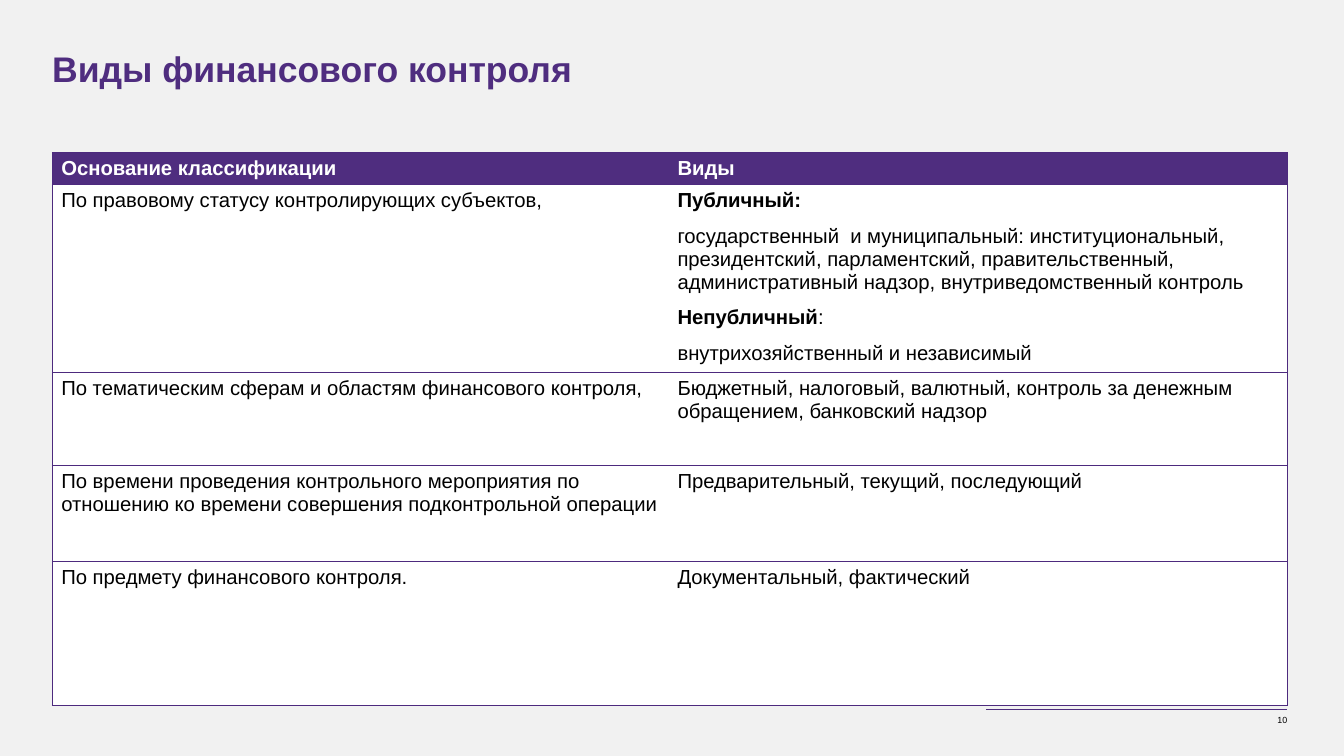
from dataclasses import dataclass

from lxml import etree
from pptx import Presentation, util as u
from pptx.dml.color import RGBColor
from pptx.enum import shapes, text
from pptx.oxml.ns import qn

COLORS = {
    "background": "F1F1F1", "purple": "4F2D7F", "border": "4D2A7E",
    "white": "FFFFFF", "black": "000000",
}
WIDTH, HEIGHT = u.Inches(14.7), u.Inches(8.27)
LEFT, SPAN, TABLE_TOP = 3.88, 91.9, 20.19
COLUMNS = (45.85, 46.05)
RULE_LEFT, RULE_TOP = 73.4, 93.83


@dataclass(frozen=True)
class Run:
    text: str
    bold: bool = False


@dataclass(frozen=True)
class Style:
    size: float
    color: str
    line: float | None = None
    before: float = 0
    align: text.PP_ALIGN = text.PP_ALIGN.LEFT


@dataclass(frozen=True)
class Row:
    height: float
    basis: list[list[Run]]
    kinds: list[list[Run]]
    fill: str = "white"
    color: str = "black"


TITLE = Style(28, "purple", line=34)
NUMBER = Style(7, "black", align=text.PP_ALIGN.RIGHT)
ROWS = [
    Row(4.2, [[Run("Основание классификации", True)]], [[Run("Виды", True)]],
        "purple", "white"),
    Row(24.8, [[Run("По правовому статусу контролирующих субъектов,")]], [
        [Run("Публичный:", True)],
        [Run("государственный  и муниципальный: институциональный, "
             "президентский, парламентский, правительственный, "
             "административный надзор, внутриведомственный контроль")],
        [Run("Непубличный", True), Run(":")],
        [Run("внутрихозяйственный и независимый")],
    ]),
    Row(12.35, [[Run("По тематическим сферам и областям финансового контроля,")]],
        [[Run("Бюджетный, налоговый, валютный, контроль за денежным "
              "обращением, банковский надзор")]]),
    Row(12.7, [[Run("По времени проведения контрольного мероприятия по "
                    "отношению ко времени совершения подконтрольной операции")]],
        [[Run("Предварительный, текущий, последующий")]]),
    Row(19, [[Run("По предмету финансового контроля.")]],
        [[Run("Документальный, фактический")]]),
]


def x(percent: float) -> int:
    return round(WIDTH * percent / 100)


def y(percent: float) -> int:
    return round(HEIGHT * percent / 100)


def rgb(name: str) -> RGBColor:
    return RGBColor.from_string(COLORS[name])


def assign(target, values: dict) -> None:
    for name, value in values.items():
        setattr(target, name, value)


def write(tf, paragraphs: list[list[Run]], style: Style) -> None:
    for i, runs in enumerate(paragraphs):
        p = tf.add_paragraph() if i else tf.paragraphs[0]
        assign(p, {"alignment": style.align, "space_before": u.Pt(style.before)})
        if style.line:
            p.line_spacing = u.Pt(style.line)
        for run in runs:
            r = p.add_run()
            r.text = run.text
            assign(r.font, {"name": "Arial", "size": u.Pt(style.size), "bold": run.bold})
            r.font.color.rgb = rgb(style.color)


def add_text(slide, box: tuple[int, int, int, int], run: Run, style: Style,
             wrap: bool, inset: float) -> None:
    tf = slide.shapes.add_textbox(*box).text_frame
    assign(tf, {"margin_left": 0, "margin_right": 0, "margin_top": u.Inches(inset),
                "margin_bottom": u.Inches(inset), "word_wrap": wrap})
    write(tf, [[run]], style)


def add_borders(cell, column: int) -> None:
    inner = "lnR" if column == 0 else "lnL"
    tc_pr = cell._tc.get_or_add_tcPr()
    for side in ("lnL", "lnR", "lnT", "lnB"):
        ln = etree.SubElement(tc_pr, qn(f"a:{side}"), w=str(u.Pt(0.75)))
        if side == inner:
            etree.SubElement(ln, qn("a:noFill"))
        else:
            fill = etree.SubElement(ln, qn("a:solidFill"))
            etree.SubElement(fill, qn("a:srgbClr"), val=COLORS["border"])


def add_kinds_table(slide) -> None:
    table = slide.shapes.add_table(
        len(ROWS), len(COLUMNS), x(LEFT), y(TABLE_TOP), x(SPAN),
        y(sum(row.height for row in ROWS))).table
    table.horz_banding = False
    for column, width in zip(table.columns, COLUMNS):
        column.width = x(width)
    for i, row in enumerate(ROWS):
        table.rows[i].height = y(row.height)
        style = Style(16, row.color, line=18, before=10)
        for j, paragraphs in enumerate((row.basis, row.kinds)):
            cell = table.cell(i, j)
            add_borders(cell, j)
            cell.fill.solid()
            cell.fill.fore_color.rgb = rgb(row.fill)
            write(cell.text_frame, paragraphs, style)


def add_rule(slide) -> None:
    line = slide.shapes.add_connector(
        shapes.MSO_CONNECTOR.STRAIGHT, x(RULE_LEFT), y(RULE_TOP),
        x(LEFT + SPAN), y(RULE_TOP))
    line.line.width = u.Pt(0.75)
    line.line.color.rgb = rgb("purple")
    etree.SubElement(line._element.spPr, qn("a:effectLst"))


def main() -> None:
    prs = Presentation()
    assign(prs, {"slide_width": WIDTH, "slide_height": HEIGHT})
    s = prs.slides.add_slide(prs.slide_layouts[6])
    s.background.fill.solid()
    s.background.fill.fore_color.rgb = rgb("background")
    add_rule(s)
    add_text(s, (x(94.97), y(93.95), x(0.81), y(2.66)), Run("10"), NUMBER, False, 0.05)
    add_text(s, (x(LEFT), y(6.17), x(SPAN), y(15.24)),
             Run("Виды финансового контроля", True), TITLE, True, 0)
    add_kinds_table(s)
    prs.save("out.pptx")


if __name__ == "__main__":
    main()
